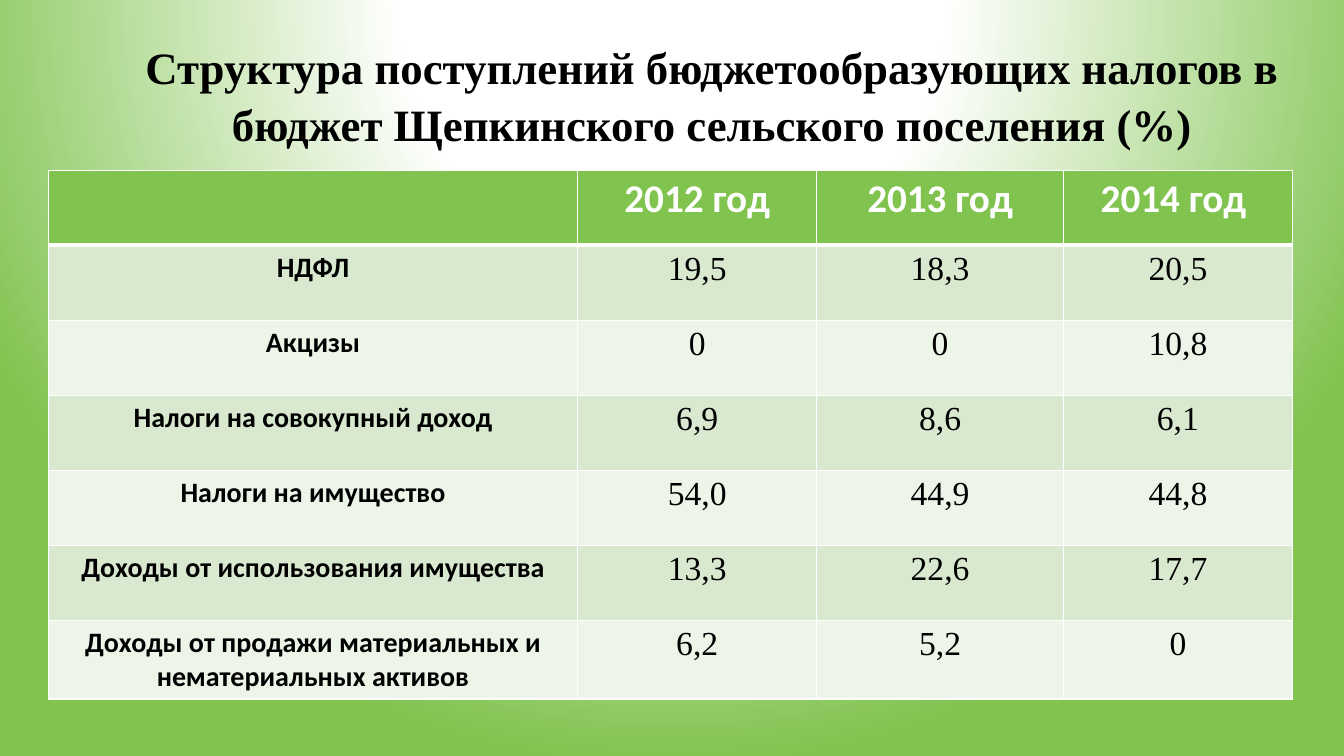
from dataclasses import dataclass

from lxml.etree import fromstring
from pptx import Presentation
from pptx.dml.color import RGBColor as Rgb
from pptx.enum.text import MSO_ANCHOR as Anchor, MSO_AUTO_SIZE as Auto, PP_ALIGN as Align
from pptx.util import Cm, Pt

NS = "http://schemas.openxmlformats.org/drawingml/2006/main"


@dataclass(frozen=True)
class Theme:
    """Colours and type formats of the deck."""
    green: str = "80C34F"
    white: str = "FFFFFF"
    black: str = "000000"
    bands: tuple = ("D8E9D0", "EDF5E9")
    title: tuple = ("Times New Roman", 32, True)
    head: tuple = ("Calibri", 28, True)
    label: tuple = ("Calibri", 20, True)
    value: tuple = ("Times New Roman", 24, False)


LOOK = Theme()
TITLE = "Структура поступлений бюджетообразующих налогов в бюджет Щепкинского сельского поселения (%)"
ROWS = [
    ("", "2012 год", "2013 год", "2014 год "),
    ("НДФЛ", "19,5", "18,3", "20,5"),
    ("Акцизы", "0", "0", "10,8"),
    ("Налоги на совокупный доход", "6,9", "8,6", "6,1"),
    ("Налоги на имущество", "54,0", "44,9", "44,8"),
    ("Доходы от использования имущества", "13,3", "22,6", "17,7"),
    ("Доходы от продажи материальных и нематериальных активов", "6,2", "5,2", "0"),
]
COLS = (13.34, 6.02, 6.22, 5.77)


def write(frame, text, form, tint):
    """Put one centred line of formatted text in a frame."""
    para = frame.paragraphs[0]
    para.alignment = Align.CENTER
    name, size, bold = form
    font = para.font
    if text:
        run = para.add_run()
        run.text = text
        font = run.font
    for key, val in {"name": name, "size": Pt(size), "bold": bold}.items():
        setattr(font, key, val)
    font.color.rgb = Rgb.from_string(tint)


def paint(slide):
    """Fill the background with a round glow from the top."""
    slide.background.fill.solid()
    props = slide.element.xpath(".//p:bgPr")[0]
    stops = "".join(
        f'<a:gs pos="{pos * 1000}"><a:srgbClr val="{tint}"/></a:gs>'
        for pos, tint in ((0, LOOK.white), (35, LOOK.white), (100, LOOK.green)))
    props.replace(props[0], fromstring(
        f'<a:gradFill xmlns:a="{NS}" rotWithShape="1"><a:gsLst>{stops}</a:gsLst>'
        '<a:path path="circle"><a:fillToRect l="50000" t="-80000" r="50000" b="180000"/>'
        '</a:path></a:gradFill>'))


def place_title(slide, left, top, width, height):
    """Set the title in its box."""
    title = slide.shapes.title
    box = {"left": left, "top": top, "width": width, "height": height}
    for key, val in box.items():
        setattr(title, key, Cm(val))
    frame = title.text_frame
    form = {"word_wrap": True, "auto_size": Auto.NONE, "vertical_anchor": Anchor.MIDDLE}
    for key, val in form.items():
        setattr(frame, key, val)
    write(frame, TITLE, LOOK.title, LOOK.black)
    frame.paragraphs[0].line_spacing = 1.05


def edge(cell, row):
    """Draw white borders, heavy under the head row."""
    props = cell._tc.get_or_add_tcPr()
    heavy = {0: "B", 1: "T"}.get(row)
    for side in "LRTB":
        width = Pt(3 if side == heavy else 1)
        props.append(fromstring(
            f'<a:ln{side} xmlns:a="{NS}" w="{width}"><a:solidFill>'
            f'<a:srgbClr val="{LOOK.white}"/></a:solidFill></a:ln{side}>'))


def place_table(slide, left, top, high):
    """Draw the tax table with rows of equal height."""
    table = slide.shapes.add_table(
        len(ROWS), len(COLS), Cm(left), Cm(top),
        Cm(sum(COLS)), Cm(high * len(ROWS))).table
    for col, width in zip(table.columns, COLS):
        col.width = Cm(width)
    for row, texts in enumerate(ROWS):
        table.rows[row].height = Cm(high)
        for col, text in enumerate(texts):
            cell = table.cell(row, col)
            edge(cell, row)
            cell.fill.solid()
            back = LOOK.bands[(row - 1) % 2] if row else LOOK.green
            cell.fill.fore_color.rgb = Rgb.from_string(back)
            form = LOOK.value if col else LOOK.label
            write(cell.text_frame, text, form if row else LOOK.head,
                  LOOK.black if row else LOOK.white)


def main():
    """Build and save the deck."""
    deck = Presentation()
    deck.slide_width, deck.slide_height = Cm(33.87), Cm(19.05)
    slide = deck.slides.add_slide(deck.slide_layouts[5])
    paint(slide)
    place_title(slide, 2.03, 0.43, 31.83, 3.86)
    place_table(slide, 1.22, 4.29, 1.89)
    deck.save("out.pptx")


if __name__ == "__main__":
    main()
